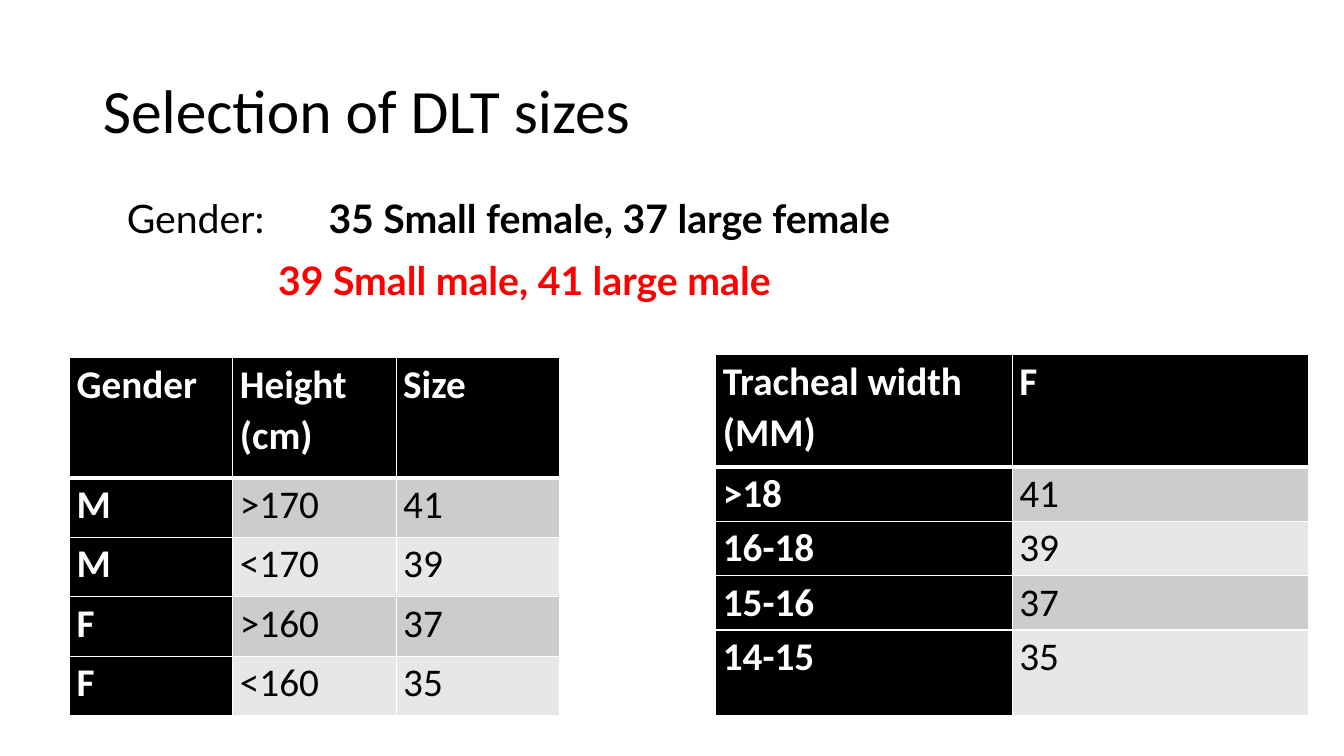
"""Build a slide on choosing double-lumen tube sizes."""
import dataclasses

import lxml.etree
import pptx
import pptx.dml.color
import pptx.enum.text
import pptx.oxml.ns
import pptx.util

Inches = pptx.util.Inches
Pt = pptx.util.Pt
qn = pptx.oxml.ns.qn


@dataclasses.dataclass(frozen=True)
class Theme:
    font: str = "Calibri"
    body_font: str = "Lato"
    ink: str = "000000"
    paper: str = "FFFFFF"
    accent: str = "FF0000"
    bands: tuple = ("CCCCCC", "E7E7E7")
    title_size: int = 44
    body_size: int = 28
    spacing: float = 1.07
    rule: int = 1
    header_rule: int = 3


class SlideBuilder:
    def __init__(self, prs, theme):
        self.theme = theme
        self.s = prs.slides.add_slide(prs.slide_layouts[5])

    def add_run(self, p, text, size, font, color, bold=False):
        r = p.add_run()
        r.text = text
        r.font.size = Pt(size)
        r.font.name = font
        r.font.bold = bold
        r.font.color.rgb = pptx.dml.color.RGBColor.from_string(color)

    def title(self, text, box):
        sp = self.s.shapes.title
        sp.left, sp.top, sp.width, sp.height = map(Inches, box)
        tf = sp.text_frame
        tf.vertical_anchor = pptx.enum.text.MSO_ANCHOR.MIDDLE
        p = tf.paragraphs[0]
        p.alignment = pptx.enum.text.PP_ALIGN.LEFT
        p.line_spacing = 0.9
        self.add_run(p, text, self.theme.title_size, self.theme.font, self.theme.ink)

    def text(self, lines, box):
        tf = self.s.shapes.add_textbox(*map(Inches, box)).text_frame
        tf.word_wrap = True
        tf.auto_size = pptx.enum.text.MSO_AUTO_SIZE.SHAPE_TO_FIT_TEXT
        for i, runs in enumerate(lines):
            p = tf.add_paragraph() if i else tf.paragraphs[0]
            p.line_spacing = self.theme.spacing
            p.space_after = Pt(8)
            for text, color, bold in runs:
                self.add_run(p, text, self.theme.body_size, self.theme.body_font, color, bold)

    def border(self, cell, side, width):
        ln = lxml.etree.SubElement(cell._tc.get_or_add_tcPr(), qn(f"a:ln{side}"), w=str(Pt(width)))
        fill = lxml.etree.SubElement(ln, qn("a:solidFill"))
        lxml.etree.SubElement(fill, qn("a:srgbClr"), val=self.theme.paper)

    def cell(self, cell, text, row, col):
        theme = self.theme
        heading = row == 0 or col == 0
        cell.margin_left = cell.margin_right = Inches(0.07)
        cell.margin_top = cell.margin_bottom = 0
        thick_sides = {0: "B", 1: "T"}
        for side in "LRTB":
            thick = thick_sides.get(row) == side
            self.border(cell, side, theme.header_rule if thick else theme.rule)
        cell.fill.solid()
        fill = theme.ink if heading else theme.bands[(row - 1) % 2]
        cell.fill.fore_color.rgb = pptx.dml.color.RGBColor.from_string(fill)
        p = cell.text_frame.paragraphs[0]
        p.line_spacing = theme.spacing
        color = theme.paper if heading else theme.ink
        self.add_run(p, text, theme.body_size, theme.font, color, heading)

    def table(self, rows, left, top, col_width, heights):
        cols = len(rows[0])
        table = self.s.shapes.add_table(
            len(rows), cols, Inches(left), Inches(top),
            Inches(col_width * cols), Inches(sum(heights))).table
        for column in table.columns:
            column.width = Inches(col_width)
        for i, (values, height) in enumerate(zip(rows, heights)):
            table.rows[i].height = Inches(height)
            for j, value in enumerate(values):
                self.cell(table.cell(i, j), value, i, j)


def main():
    prs = pptx.Presentation()
    prs.slide_width, prs.slide_height = Inches(13.33), Inches(7.5)
    theme = Theme()
    slide = SlideBuilder(prs, theme)
    slide.title("Selection of DLT sizes", (0.92, 0.4, 11.5, 1.45))
    slide.table(
        [("Tracheal width (MM)", "F"), (">18", "41"), ("16-18", "39"),
         ("15-16", "37"), ("14-15", "35")],
        7.1, 3.52, 2.94, [1.11] + [0.54] * 3 + [0.85])
    slide.table(
        [("Gender", "Height (cm)", "Size"), ("M", ">170", "41"), ("M", "<170", "39"),
         ("F", ">160", "37"), ("F", "<160", "35")],
        0.69, 3.55, 1.62, [1.19] + [0.59] * 4)
    slide.text(
        [[("Gender: \t\t", theme.ink, False),
          ("35 Small female, 37 large female", theme.ink, True)],
         [("\t\t\t", theme.ink, False),
          ("39 Small male, 41 large male", theme.accent, True)]],
        (1.16, 1.85, 10.19, 1.19))
    prs.save("out.pptx")


if __name__ == "__main__":
    main()
